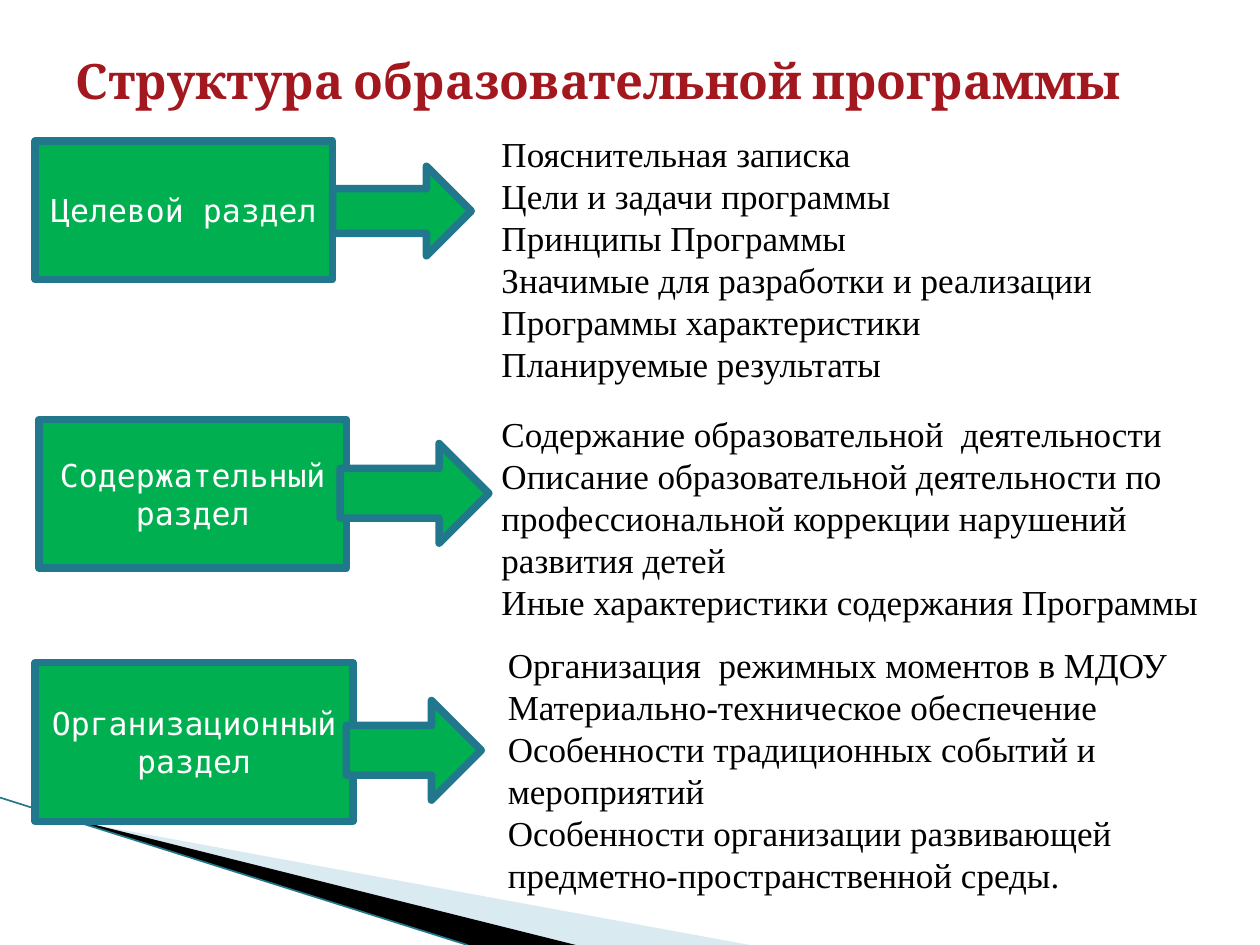
from dataclasses import dataclass

from lxml.etree import SubElement
from pptx import Presentation
from pptx.dml.color import RGBColor as RGB
from pptx.enum.shapes import MSO_CONNECTOR as Connector, MSO_SHAPE as Shape
from pptx.enum.text import MSO_ANCHOR as Anchor, MSO_AUTO_SIZE as AutoSize, PP_ALIGN as Align
from pptx.oxml.ns import qn
from pptx.util import Inches, Pt


@dataclass(frozen=True)
class Theme:
    title_color: RGB = RGB.from_string("A3171E")
    fill: RGB = RGB.from_string("00B050")
    outline: RGB = RGB.from_string("21788D")
    pale: RGB = RGB.from_string("D9EAF1")
    black: RGB = RGB.from_string("000000")
    white: RGB = RGB.from_string("FFFFFF")
    title_font: str = "Cambria"
    label_font: str = "DejaVu Sans Mono"
    list_font: str = "Times New Roman"
    title_size: float = 27.9
    label_size: float = 18
    list_size: float = 20
    outline_width: float = 4.33
    thin_width: float = 0.95


theme = Theme()
presentation = Presentation()
presentation.slide_width, presentation.slide_height = Inches(10), Inches(7.5)
column = presentation.slide_width / 100
row = presentation.slide_height / 75


def grid(*cells):
    return [round(cell * (row if index % 2 else column)) for index, cell in enumerate(cells)]


def set_font(paragraph, name, size, color, bold=False):
    font = paragraph.font
    font.name, font.size, font.bold = name, Pt(size), bold
    font.color.rgb = color


slide = presentation.slides.add_slide(presentation.slide_layouts[4])
shapes = slide.shapes

title = shapes.title
title.left, title.top, title.width, title.height = grid(5, 3, 90, 12.5)
title.text_frame.text = "Структура образовательной программы"
title.text_frame.vertical_anchor = Anchor.TOP
title.text_frame.margin_top = round(row)
title.text_frame.auto_size = AutoSize.NONE
title_paragraph = title.text_frame.paragraphs[0]
title_paragraph.alignment = Align.LEFT
set_font(title_paragraph, theme.title_font, theme.title_size, theme.title_color, True)

wedges = [
    (theme.pale, [(5.5, 65.1), (59.5, 75), (45.6, 75), (5.5, 65)]),
    (theme.black, [(5.3, 64.9), (45.7, 75), (37.2, 75), (5.4, 65)]),
]
for color, points in wedges:
    corners = [grid(*point) for point in points]
    builder = shapes.build_freeform(*corners[0], scale=1.0)
    builder.add_line_segments(corners[1:], close=True)
    wedge = builder.convert_to_shape()
    wedge.shadow.inherit = False
    wedge.fill.solid()
    wedge.fill.fore_color.rgb = color
    wedge.line.fill.background()

edge = shapes.add_connector(Connector.STRAIGHT, *grid(0, 63.3, 37.1, 75))
edge.line.color.rgb = theme.outline
edge.line.width = Pt(theme.thin_width)
SubElement(edge._element.spPr, qn("a:effectLst"))

sections = [
    ("Целевой раздел", (2.8, 11.2, 23.6, 11), (26.4, 13.2, 11, 7.1), (38.8, 10, 58.5, 21.2), [
        "Пояснительная записка",
        "Цели и задачи программы",
        "Принципы Программы",
        "Значимые для разработки и реализации Программы характеристики",
        "Планируемые результаты",
    ]),
    ("Содержательный раздел", (3.1, 33.3, 24.4, 11.8), (27, 35.2, 11.8, 7.9), (38.8, 32.2, 59.2, 17.8), [
        "Содержание образовательной  деятельности",
        "Описание образовательной деятельности по профессиональной коррекции нарушений развития детей",
        "Иные характеристики содержания Программы",
    ]),
    ("Организационный раздел", (2.8, 52.6, 25.2, 12.6), (27.5, 55.6, 10.7, 7.9), (39.3, 50.6, 58.7, 21.2), [
        "Организация  режимных моментов в МДОУ",
        "Материально-техническое обеспечение",
        "Особенности традиционных событий и мероприятий",
        "Особенности организации развивающей предметно-пространственной среды.",
    ]),
]
bodies = [shape for shape in slide.placeholders if shape.placeholder_format.idx in (1, 2, 3, 4)]

for body, (label, label_cells, arrow_cells, list_cells, items) in zip(bodies, sections):
    for preset, cells, text in (
        (Shape.RECTANGLE, label_cells, label),
        (Shape.RIGHT_ARROW, arrow_cells, ""),
    ):
        shape = shapes.add_shape(preset, *grid(*cells))
        shape.shadow.inherit = False
        shape.fill.solid()
        shape.fill.fore_color.rgb = theme.fill
        shape.line.color.rgb = theme.outline
        shape.line.width = Pt(theme.outline_width)
        SubElement(shape.line._get_or_add_ln(), qn("a:round"))
        if text:
            shape.text_frame.text = text
            shape.text_frame.vertical_anchor = Anchor.MIDDLE
            paragraph = shape.text_frame.paragraphs[0]
            paragraph.alignment = Align.CENTER
            set_font(paragraph, theme.label_font, theme.label_size, theme.white)

    body.left, body.top, body.width, body.height = grid(*list_cells)
    frame = body.text_frame
    frame.text = "\n".join(items)
    frame.word_wrap = True
    frame.auto_size = AutoSize.NONE
    frame.vertical_anchor = Anchor.TOP
    for paragraph in frame.paragraphs:
        properties = paragraph._p.get_or_add_pPr()
        properties.set("marL", "0")
        properties.set("indent", "0")
        SubElement(properties, qn("a:buNone"))
        paragraph.space_before = Pt(0)
        set_font(paragraph, theme.list_font, theme.list_size, theme.black)

for spare in bodies[len(sections):]:
    spare._element.getparent().remove(spare._element)

presentation.save("out.pptx")
